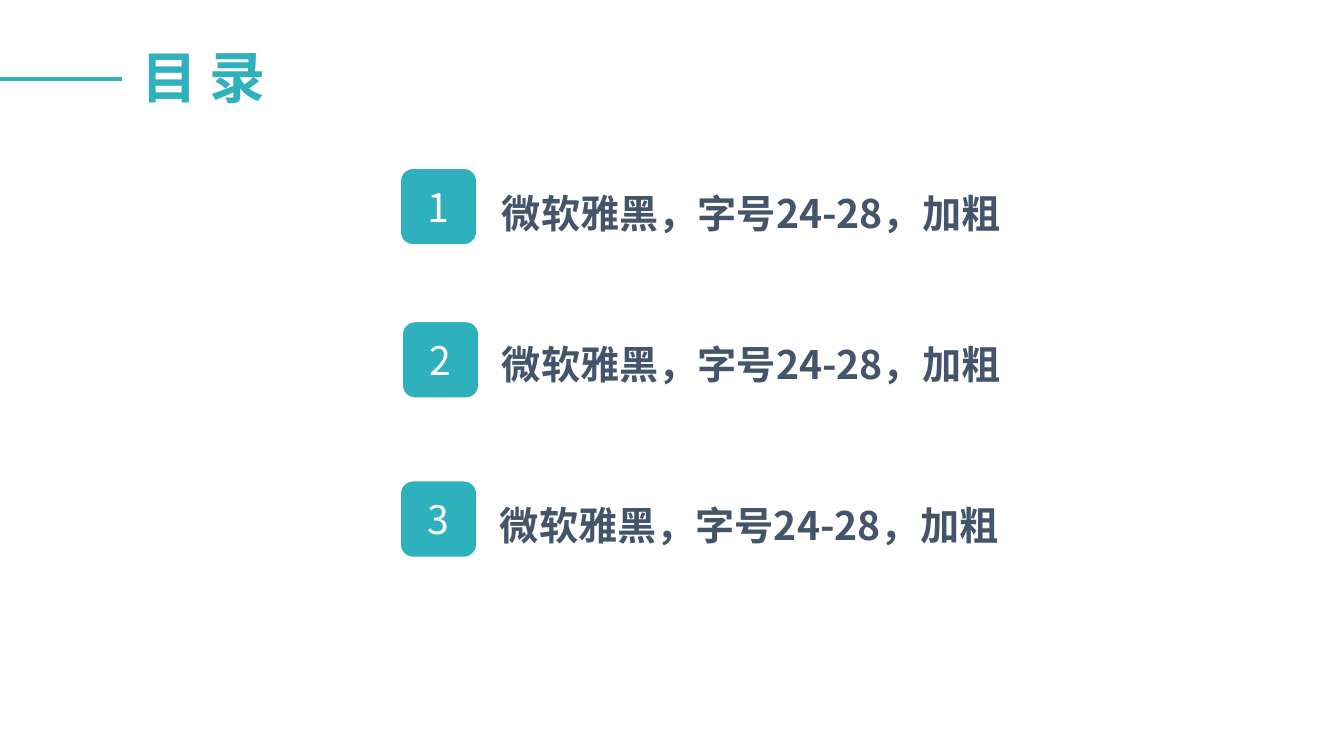
from dataclasses import dataclass

from lxml.etree import SubElement
from pptx import Presentation
from pptx.dml.color import RGBColor
from pptx.enum.shapes import MSO_CONNECTOR as Connector, MSO_SHAPE as Shape
from pptx.enum.text import MSO_ANCHOR as Anchor, MSO_AUTO_SIZE as AutoSize, PP_ALIGN as Align
from pptx.oxml.ns import qn
from pptx.shapes.group import GroupShape
from pptx.slide import Slide
from pptx.text.text import TextFrame
from pptx.util import Inches, Pt

TEAL = "2EB0BD"
SLATE = "44546A"
WHITE = "FFFFFF"
CJK_FONT = "Noto Sans CJK SC"
BADGE_SIZE = 0.76
ENTRY_TEXT = "微软雅黑，字号24-28，加粗"


@dataclass(frozen=True)
class Entry:
    number: int
    badge_left: float
    badge_top: float
    text_left: float
    text_top: float


ENTRIES = [
    Entry(1, 3.97, 1.67, 4.88, 1.83),
    Entry(2, 3.99, 3.19, 4.88, 3.33),
    Entry(3, 3.97, 4.77, 4.86, 4.92),
]


def color(value: str) -> RGBColor:
    return RGBColor.from_string(value)


def write(frame: TextFrame, text: str, *, size: float = 28, fill: str = SLATE,
          font: str = CJK_FONT, bold: bool = False, align: Align = Align.LEFT,
          anchor: Anchor = Anchor.TOP, wrap: bool = True) -> None:
    """Put one formatted paragraph in the frame."""
    frame.auto_size = AutoSize.NONE
    frame.word_wrap = wrap
    frame.vertical_anchor = anchor
    para = frame.paragraphs[0]
    para.alignment = align
    span = para.add_run()
    span.text = text
    span.font.size = Pt(size)
    span.font.bold = bold
    span.font.name = font
    span.font.color.rgb = color(fill)
    east_asian = SubElement(span.font._element, qn("a:ea"))
    east_asian.set("typeface", CJK_FONT)


def add_heading(page: Slide) -> None:
    title = page.shapes.title
    title.left, title.top = Inches(1.3), Inches(0.37)
    title.width, title.height = Inches(1.45), Inches(0.77)
    write(title.text_frame, "目 录", size=40, fill=TEAL, font="Calibri",
          bold=True, wrap=False)

    rule = page.shapes.add_connector(
        Connector.STRAIGHT, Inches(0), Inches(0.78), Inches(1.21), Inches(0.78))
    rule.line.color.rgb = color(TEAL)
    rule.line.width = Pt(3)
    SubElement(rule._element.spPr, qn("a:effectLst"))


def add_badge(group: GroupShape, entry: Entry) -> None:
    badge = group.shapes.add_shape(
        Shape.ROUNDED_RECTANGLE, Inches(entry.badge_left), Inches(entry.badge_top),
        Inches(BADGE_SIZE), Inches(BADGE_SIZE))
    badge.shadow.inherit = False
    badge.fill.solid()
    badge.fill.fore_color.rgb = color(TEAL)
    badge.line.color.rgb = color(WHITE)
    badge.line.width = Pt(1)
    write(badge.text_frame, str(entry.number), fill=WHITE,
          align=Align.CENTER, anchor=Anchor.MIDDLE)


def add_entry(page: Slide, entry: Entry) -> None:
    group = page.shapes.add_group_shape()
    add_badge(group, entry)
    box = group.shapes.add_textbox(
        Inches(entry.text_left), Inches(entry.text_top), Inches(5.27), Inches(0.57))
    write(box.text_frame, ENTRY_TEXT, bold=True)


def main() -> None:
    deck = Presentation()
    deck.slide_width, deck.slide_height = Inches(13.33), Inches(7.5)
    page = deck.slides.add_slide(deck.slide_layouts.get_by_name("Title Only"))
    page.background.fill.solid()
    page.background.fill.fore_color.rgb = color(WHITE)
    add_heading(page)
    for entry in ENTRIES:
        add_entry(page, entry)
    deck.save("out.pptx")


if __name__ == "__main__":
    main()
